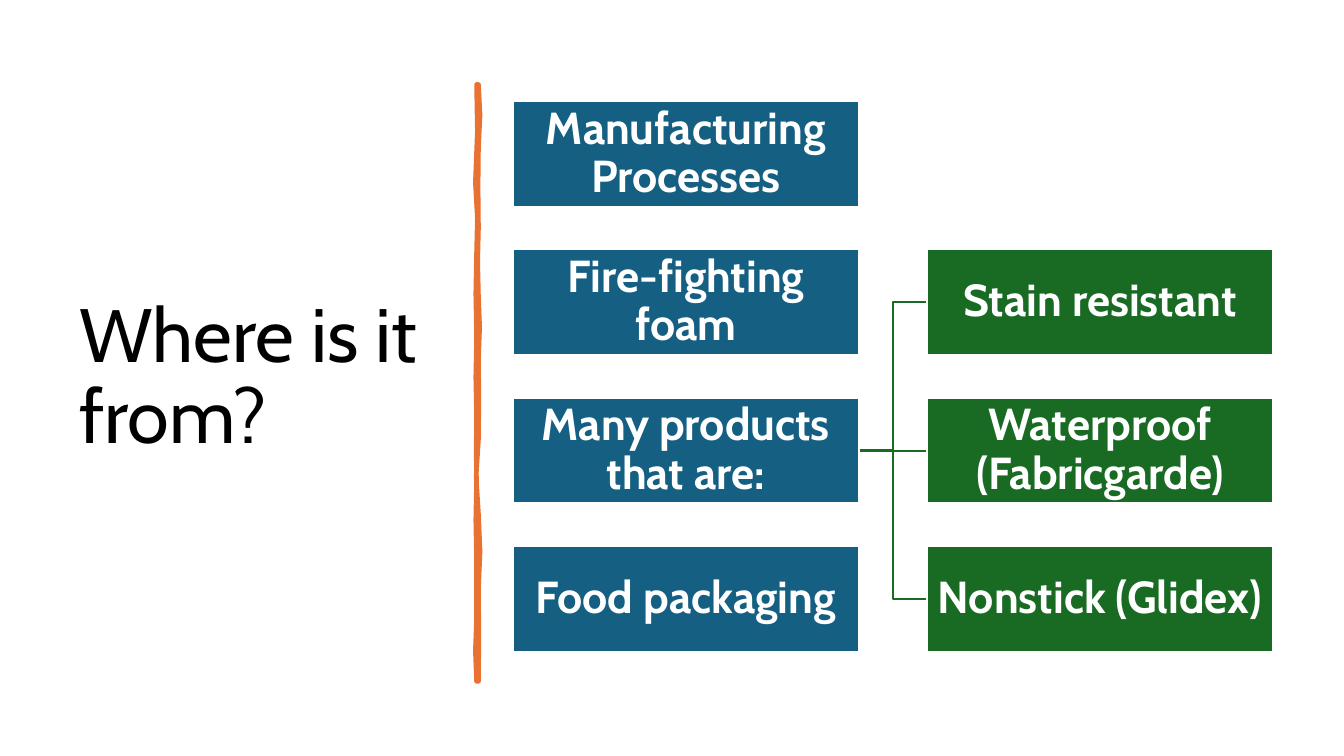
"""Build the slide on where the substance comes from."""
from lxml import etree
from pptx import Presentation
from pptx.dml.color import RGBColor
from pptx.enum.shapes import MSO_CONNECTOR as CONN, MSO_SHAPE
from pptx.enum.text import MSO_ANCHOR, MSO_AUTO_SIZE, PP_ALIGN
from pptx.oxml.ns import qn
from pptx.util import Cm, Pt

COLORS = {"source": "156082", "product": "196B24", "rule": "E97132",
          "white": "FFFFFF", "black": "000000"}
FONT = "Cabin"
BOX_W, BOX_H = 8.71, 2.67
SOURCE_X, PRODUCT_X = 12.93, 23.37
TOP, STEP = 2.54, 3.74
SOURCES = ["Manufacturing Processes", "Fire-fighting foam",
           "Many products that are:", "Food packaging"]
PRODUCTS = ["Stain resistant", "Waterproof (Fabricgarde)", "Nonstick (Glidex)"]
RULE_RIGHT = [(1206, 213), (1210, 290), (1206, 371), (1205, 470), (1206, 574),
              (1204, 660), (1206, 747), (1209, 825), (1206, 904), (1207, 1000),
              (1206, 1107), (1200, 1200), (1206, 1295), (1210, 1390),
              (1206, 1483), (1207, 1600), (1206, 1717)]
RULE_LEFT = [(1201, 1717), (1198, 1640), (1201, 1557), (1201, 1415),
             (1199, 1310), (1201, 1212), (1200, 1130), (1201, 1054),
             (1199, 950), (1201, 851), (1199, 740), (1201, 635), (1203, 550),
             (1198, 460), (1203, 330), (1201, 213)]


def rgb(name):
    return RGBColor.from_string(COLORS[name])


def style_text(tf, size, color, align, bold=False):
    tf.word_wrap = True
    tf.auto_size = MSO_AUTO_SIZE.NONE
    tf.vertical_anchor = MSO_ANCHOR.MIDDLE
    p = tf.paragraphs[0]
    p.alignment = align
    p.line_spacing = 0.9
    for r in p.runs:
        r.font.name = FONT
        r.font.size = Pt(size)
        r.font.bold = bold
        r.font.color.rgb = rgb(color)


def set_title(slide, text):
    sp = slide.shapes.title
    sp.left, sp.top, sp.width, sp.height = Cm(1.75), Cm(1.78), Cm(9.5), Cm(15.52)
    sp.text_frame.text = text
    style_text(sp.text_frame, 54, "black", PP_ALIGN.LEFT)


def add_rule(slide):
    builder = slide.shapes.build_freeform(*RULE_RIGHT[0], scale=Cm(0.01))
    builder.add_line_segments(RULE_RIGHT[1:] + RULE_LEFT, close=True)
    sp = builder.convert_to_shape()
    sp.shadow.inherit = False
    sp.fill.solid()
    sp.fill.fore_color.rgb = rgb("rule")
    sp.line.color.rgb = rgb("rule")
    sp.line.width = Pt(3.25)
    etree.SubElement(sp.line._get_or_add_ln(), qn("a:round"))


def add_box(slide, text, x, row, color):
    sp = slide.shapes.add_shape(MSO_SHAPE.RECTANGLE, Cm(x), Cm(TOP + row * STEP),
                                Cm(BOX_W), Cm(BOX_H))
    sp.shadow.inherit = False
    sp.fill.solid()
    sp.fill.fore_color.rgb = rgb(color)
    sp.line.color.rgb = rgb("white")
    sp.line.width = Pt(1.5)
    tf = sp.text_frame
    tf.margin_left = tf.margin_right = tf.margin_top = tf.margin_bottom = Cm(0.05)
    tf.text = text
    style_text(tf, 32, "white", PP_ALIGN.CENTER, bold=True)
    return sp


def add_branch(slide, parent, child):
    kind = CONN.STRAIGHT if parent.top == child.top else CONN.ELBOW
    c = slide.shapes.add_connector(
        kind, parent.left + parent.width, parent.top + parent.height // 2,
        child.left, child.top + child.height // 2)
    c.begin_connect(parent, 3)
    c.end_connect(child, 1)
    c.line.color.rgb = rgb("product")
    c.line.width = Pt(1.5)
    etree.SubElement(c._element.spPr, qn("a:effectLst"))
    parent._element.addprevious(c._element)


def main():
    prs = Presentation()
    prs.slide_width, prs.slide_height = Cm(33.87), Cm(19.05)
    slide = prs.slides.add_slide(prs.slide_layouts[5])
    set_title(slide, "Where is it from?")
    add_rule(slide)
    sources = [add_box(slide, text, SOURCE_X, row, "source")
               for row, text in enumerate(SOURCES)]
    for row, text in enumerate(PRODUCTS, start=1):
        add_branch(slide, sources[2], add_box(slide, text, PRODUCT_X, row, "product"))
    prs.save("out.pptx")


if __name__ == "__main__":
    main()
